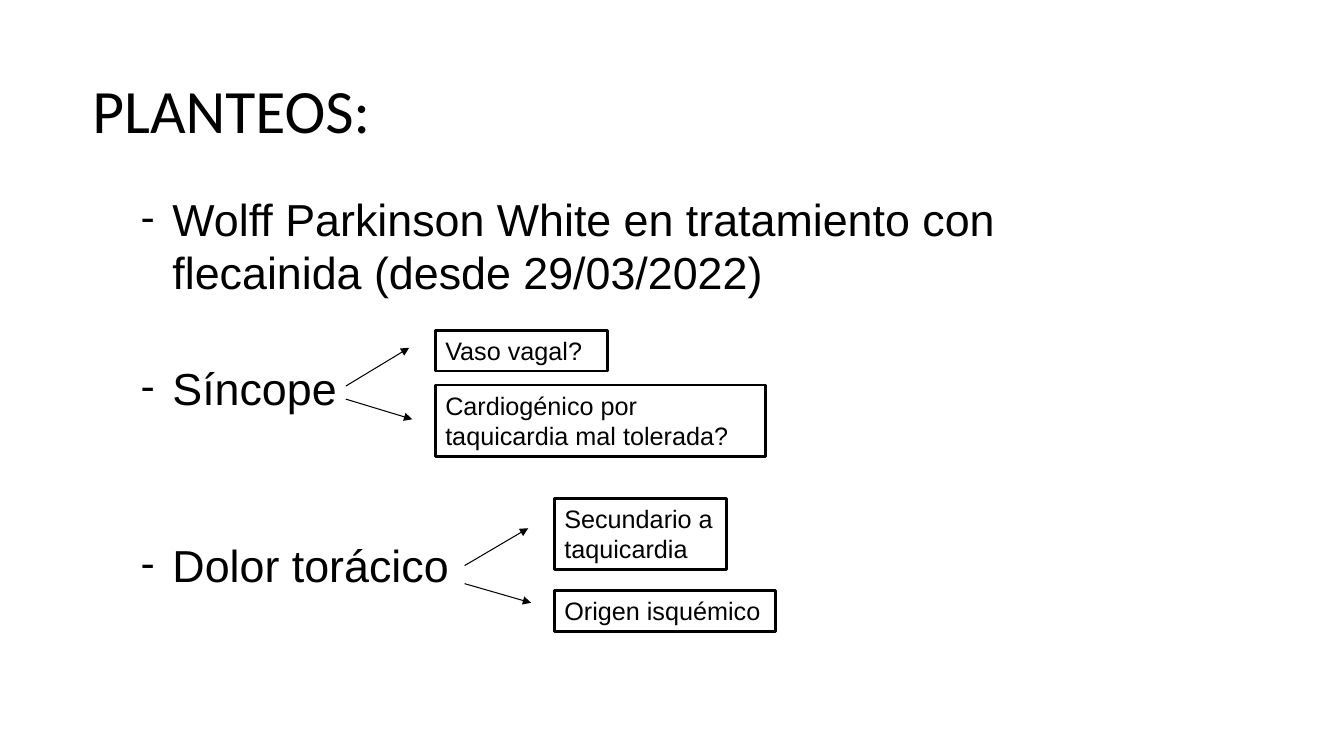
from dataclasses import dataclass

from lxml import etree
from pptx import Presentation
from pptx.dml.color import RGBColor
from pptx.enum.shapes import MSO_CONNECTOR, MSO_SHAPE
from pptx.enum.text import MSO_ANCHOR, MSO_AUTO_SIZE, PP_ALIGN
from pptx.oxml.ns import qn
from pptx.slide import Slide
from pptx.text.text import TextFrame, _Paragraph
from pptx.util import Pt

RECTANGLE = MSO_SHAPE.RECTANGLE
STRAIGHT = MSO_CONNECTOR.STRAIGHT
LEFT = PP_ALIGN.LEFT
TOP, MIDDLE = MSO_ANCHOR.TOP, MSO_ANCHOR.MIDDLE
NO_AUTOFIT = MSO_AUTO_SIZE.NONE
TITLE_ONLY = 5


@dataclass(frozen=True)
class Theme:
    ink: RGBColor = RGBColor(0, 0, 0)
    paper: RGBColor = RGBColor(255, 255, 255)
    title_font: str = "Calibri"
    body_font: str = "Arial"
    title_size: float = 44
    item_size: float = 32
    cause_size: float = 18
    border: float = 2
    arrow: float = 0.75
    indent: float = 22.5


@dataclass(frozen=True)
class Item:
    text: str
    space_before: float


@dataclass(frozen=True)
class Cause:
    """A possible cause in its box, and the arrow that leads to it."""
    text: str
    left: float
    top: float
    width: float
    height: float
    arrow_from: tuple[float, float]
    arrow_to: tuple[float, float]


THEME = Theme()

ITEMS = [
    Item("Wolff Parkinson White en tratamiento con flecainida (desde 29/03/2022)", 0),
    Item("Síncope", 44),
    Item("Dolor torácico", 88),
]

CAUSES = [
    Cause("Vaso vagal?", 311, 236, 123, 29, (247, 275.8), (292.3, 248.4)),
    Cause("Cardiogénico por taquicardia mal tolerada?", 311, 275, 236, 51,
          (247, 285.1), (294.5, 299.5)),
    Cause("Secundario a taquicardia", 396, 356, 123, 51, (331.9, 404), (377.3, 377.3)),
    Cause("Origen isquémico", 396, 422, 157.7, 29, (331.9, 416.9), (379.4, 430.6)),
]


def add_text(paragraph: _Paragraph, text: str, font: str, size: float) -> None:
    paragraph.alignment = LEFT
    run = paragraph.add_run()
    run.text = text
    run.font.name = font
    run.font.size = Pt(size)
    run.font.color.rgb = THEME.ink


def set_dash_bullet(paragraph: _Paragraph) -> None:
    properties = paragraph._p.get_or_add_pPr()
    properties.set("marL", str(Pt(THEME.indent)))
    properties.set("indent", str(-Pt(THEME.indent)))
    etree.SubElement(properties, qn("a:buFont")).set("typeface", THEME.title_font)
    etree.SubElement(properties, qn("a:buChar")).set("char", "-")


def set_frame(frame: TextFrame, anchor: MSO_ANCHOR) -> None:
    frame.word_wrap = True
    frame.auto_size = NO_AUTOFIT
    frame.vertical_anchor = anchor


def add_title(slide: Slide, text: str) -> None:
    title = slide.shapes.title
    title.left, title.top, title.width, title.height = Pt(66), Pt(28.8), Pt(828), Pt(104.4)
    frame = title.text_frame
    set_frame(frame, MIDDLE)
    frame.margin_left = frame.margin_right = frame.margin_top = frame.margin_bottom = 0
    heading = frame.paragraphs[0]
    heading.line_spacing = 0.9
    add_text(heading, text, THEME.title_font, THEME.title_size)


def add_items(slide: Slide, items: list[Item]) -> None:
    box = slide.shapes.add_textbox(Pt(93.6), Pt(133.2), Pt(690), Pt(346))
    frame = box.text_frame
    set_frame(frame, TOP)
    for index, item in enumerate(items):
        paragraph = frame.add_paragraph() if index else frame.paragraphs[0]
        paragraph.space_before = Pt(item.space_before)
        set_dash_bullet(paragraph)
        add_text(paragraph, item.text, THEME.body_font, THEME.item_size)


def add_arrow(slide: Slide, start: tuple[float, float], end: tuple[float, float]) -> None:
    arrow = slide.shapes.add_connector(STRAIGHT, *map(Pt, start + end))
    arrow.line.color.rgb = THEME.ink
    arrow.line.width = Pt(THEME.arrow)
    etree.SubElement(arrow.line._get_or_add_ln(), qn("a:tailEnd")).set("type", "triangle")
    etree.SubElement(arrow._element.spPr, qn("a:effectLst"))


def add_cause(slide: Slide, cause: Cause) -> None:
    add_arrow(slide, cause.arrow_from, cause.arrow_to)
    box = slide.shapes.add_shape(
        RECTANGLE, Pt(cause.left), Pt(cause.top), Pt(cause.width), Pt(cause.height))
    box.shadow.inherit = False
    box.fill.solid()
    box.fill.fore_color.rgb = THEME.paper
    box.line.color.rgb = THEME.ink
    box.line.width = Pt(THEME.border)
    set_frame(box.text_frame, TOP)
    add_text(box.text_frame.paragraphs[0], cause.text, THEME.body_font, THEME.cause_size)


def main() -> None:
    presentation = Presentation()
    presentation.slide_width, presentation.slide_height = Pt(960), Pt(540)
    slide = presentation.slides.add_slide(presentation.slide_layouts[TITLE_ONLY])

    # Heading and list of hypotheses
    add_title(slide, "PLANTEOS:")
    add_items(slide, ITEMS)

    # Possible causes beside each symptom
    for cause in CAUSES:
        add_cause(slide, cause)

    presentation.save("out.pptx")


if __name__ == "__main__":
    main()
